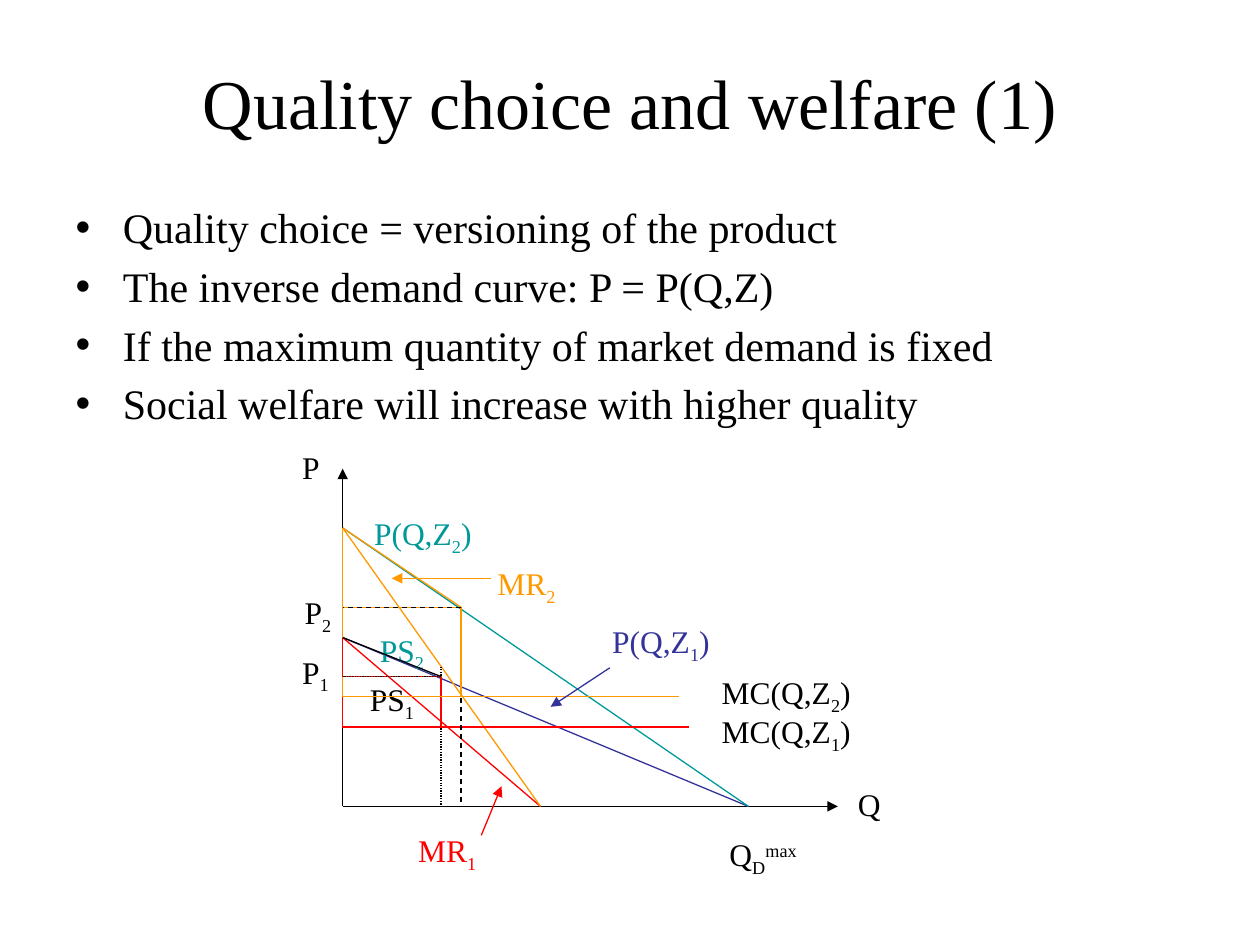
from dataclasses import dataclass

from lxml.etree import SubElement
from pptx import Presentation
from pptx.dml.color import RGBColor
from pptx.enum.dml import MSO_LINE
from pptx.enum.shapes import MSO_CONNECTOR, MSO_SHAPE
from pptx.enum.text import MSO_ANCHOR, MSO_AUTO_SIZE, PP_ALIGN
from pptx.oxml.ns import qn
from pptx.util import Inches, Pt


@dataclass(frozen=True)
class Theme:
    font: str = "Times New Roman"
    black: str = "000000"
    blue: str = "333399"
    teal: str = "009999"
    red: str = "FF0000"
    orange: str = "FF9900"
    title_size: int = 40
    body_size: int = 24
    label_size: int = 18
    line_width: float = 0.75


THEME = Theme()

AXIS_X, AXIS_Y = 2.72, 6.4
ORIGIN = (AXIS_X, AXIS_Y)
CHOKE_1, CHOKE_2 = (AXIS_X, 5.06), (AXIS_X, 4.19)
MAX_DEMAND = (5.94, AXIS_Y)
MR_END = (4.29, AXIS_Y)
QUANTITY_1, QUANTITY_2 = 3.5, 3.66
PRICE_1, PRICE_2 = 5.37, 4.82
COST_1, COST_2 = 5.77, 5.53
OPTIMUM_1, OPTIMUM_2 = (QUANTITY_1, PRICE_1), (QUANTITY_2, PRICE_2)
PRICE_POINT_1, PRICE_POINT_2 = (AXIS_X, PRICE_1), (AXIS_X, PRICE_2)
BASELINES = {"normal": 0, "sub": -25000, "super": 30000}

BULLETS = [
    "Quality choice = versioning of the product",
    "The inverse demand curve: P = P(Q,Z)",
    "If the maximum quantity of market demand is fixed",
    "Social welfare will increase with higher quality",
]


def indexed(name, index, ending=""):
    pieces = [(name, "normal"), (index, "sub")]
    return pieces + [(ending, "normal")] if ending else pieces


LABELS = [
    (6.71, 6.18, 0.38, [("Q", "normal")], THEME.black),
    (2.3, 3.51, 0.34, [("P", "normal")], THEME.black),
    (5.69, 6.58, 0.79, indexed("Q", "D") + [("max", "super")], THEME.black),
    (4.76, 4.89, 0.99, indexed("P(Q,Z", "1", ")"), THEME.blue),
    (2.87, 4.03, 0.99, indexed("P(Q,Z", "2", ")"), THEME.teal),
    (3.22, 6.55, 0.67, indexed("MR", "1"), THEME.red),
    (3.85, 4.43, 0.67, indexed("MR", "2"), THEME.orange),
    (5.63, 5.6, 1.24, indexed("MC(Q,Z", "1", ")"), THEME.black),
    (5.63, 5.29, 1.24, indexed("MC(Q,Z", "2", ")"), THEME.black),
    (2.3, 5.13, 0.42, indexed("P", "1"), THEME.black),
    (2.32, 4.66, 0.42, indexed("P", "2"), THEME.black),
]


def set_font(paragraph, size, color=THEME.black):
    paragraph.font.name = THEME.font
    paragraph.font.size = Pt(size)
    paragraph.font.color.rgb = RGBColor.from_string(color)


def place(shape, left, top, width, height):
    shape.left, shape.top = Inches(left), Inches(top)
    shape.width, shape.height = Inches(width), Inches(height)


def fill_placeholders(slide):
    title, body = slide.shapes.title, slide.placeholders[1]
    place(title, 0.5, 0.3, 9, 1.01)
    title.text_frame.text = "Quality choice and welfare (1)"
    title.text_frame.vertical_anchor = MSO_ANCHOR.MIDDLE
    set_font(title.text_frame.paragraphs[0], THEME.title_size)
    place(body, 0.5, 1.55, 9, 5.59)
    body.text_frame.text = "\n".join(BULLETS)
    for paragraph in body.text_frame.paragraphs:
        set_font(paragraph, THEME.body_size)


def write_label(shape, pieces, color):
    shape.text_frame.word_wrap = False
    paragraph = shape.text_frame.paragraphs[0]
    set_font(paragraph, THEME.label_size, color)
    for text, position in pieces:
        run = paragraph.add_run()
        run.text = text
        if BASELINES[position]:
            run.font._element.set("baseline", str(BASELINES[position]))
    return paragraph


def add_label(shapes, left, top, width, pieces, color):
    box = shapes.add_textbox(Inches(left), Inches(top), Inches(width), Inches(0.4))
    write_label(box, pieces, color)
    box.text_frame.auto_size = MSO_AUTO_SIZE.SHAPE_TO_FIT_TEXT


def add_line(shapes, start, end, color=THEME.black, dash=None, arrow=False):
    connector = shapes.add_connector(
        MSO_CONNECTOR.STRAIGHT, *(Inches(value) for value in start + end)
    )
    connector.line.color.rgb = RGBColor.from_string(color)
    connector.line.width = Pt(THEME.line_width)
    if dash:
        connector.line.dash_style = dash
    if arrow:
        SubElement(connector.line._get_or_add_ln(), qn("a:tailEnd"), type="triangle")
    SubElement(connector._element.spPr, qn("a:effectLst"))


def add_surplus(shapes, corner, cost, pieces, line_color, text_color):
    right, top = corner
    shape = shapes.add_shape(
        MSO_SHAPE.RECTANGLE, Inches(AXIS_X), Inches(top),
        Inches(right - AXIS_X), Inches(cost - top),
    )
    shape.shadow.inherit = False
    shape.fill.background()
    shape.line.color.rgb = RGBColor.from_string(line_color)
    shape.line.width = Pt(THEME.line_width)
    shape.text_frame.vertical_anchor = MSO_ANCHOR.MIDDLE
    write_label(shape, pieces, text_color).alignment = PP_ALIGN.CENTER


def add_triangle(shapes, choke, price_point, optimum, color, slope_color):
    group = shapes.add_group_shape().shapes
    add_line(group, choke, price_point, color)
    add_line(group, price_point, optimum, color)
    add_line(group, choke, optimum, slope_color)


def draw_curves(shapes):
    add_line(shapes, ORIGIN, (AXIS_X, 3.72), arrow=True)
    add_line(shapes, ORIGIN, (6.65, AXIS_Y), arrow=True)
    add_line(shapes, CHOKE_1, MAX_DEMAND, THEME.blue)
    add_line(shapes, CHOKE_2, MAX_DEMAND, THEME.teal)
    add_line(shapes, CHOKE_1, MR_END, THEME.red)
    add_line(shapes, CHOKE_2, MR_END, THEME.orange)
    add_line(shapes, (AXIS_X, COST_1), (5.47, COST_1), THEME.red)
    add_line(shapes, (AXIS_X, COST_2), (5.39, COST_2), THEME.orange)
    add_line(shapes, (QUANTITY_1, 5.29), (QUANTITY_1, AXIS_Y), dash=MSO_LINE.ROUND_DOT)
    add_line(shapes, OPTIMUM_2, (QUANTITY_2, AXIS_Y), dash=MSO_LINE.DASH)


def draw_pointers(shapes):
    add_line(shapes, (3.9, 4.59), (3.11, 4.59), THEME.orange, arrow=True)
    add_line(shapes, (3.82, 6.63), (3.98, 6.24), THEME.red, arrow=True)
    add_line(shapes, (4.84, 5.3), (4.37, 5.61), THEME.blue, arrow=True)


def draw_surpluses(shapes):
    add_surplus(shapes, OPTIMUM_1, COST_1, indexed("PS", "1"), THEME.red, THEME.black)
    add_surplus(shapes, OPTIMUM_2, COST_2, indexed("PS", "2"), THEME.orange, THEME.teal)
    add_triangle(shapes, CHOKE_1, PRICE_POINT_1, OPTIMUM_1, THEME.red, THEME.black)
    add_triangle(shapes, CHOKE_2, PRICE_POINT_2, OPTIMUM_2, THEME.orange, THEME.orange)
    add_line(shapes, OPTIMUM_2, PRICE_POINT_2, dash=MSO_LINE.DASH)
    add_line(shapes, OPTIMUM_1, PRICE_POINT_1, dash=MSO_LINE.ROUND_DOT)


def main():
    presentation = Presentation()
    presentation.slide_width, presentation.slide_height = Inches(10), Inches(7.5)
    slide = presentation.slides.add_slide(presentation.slide_layouts[1])
    fill_placeholders(slide)
    draw_curves(slide.shapes)
    for label in LABELS:
        add_label(slide.shapes, *label)
    draw_pointers(slide.shapes)
    draw_surpluses(slide.shapes)
    presentation.save("out.pptx")


if __name__ == "__main__":
    main()
